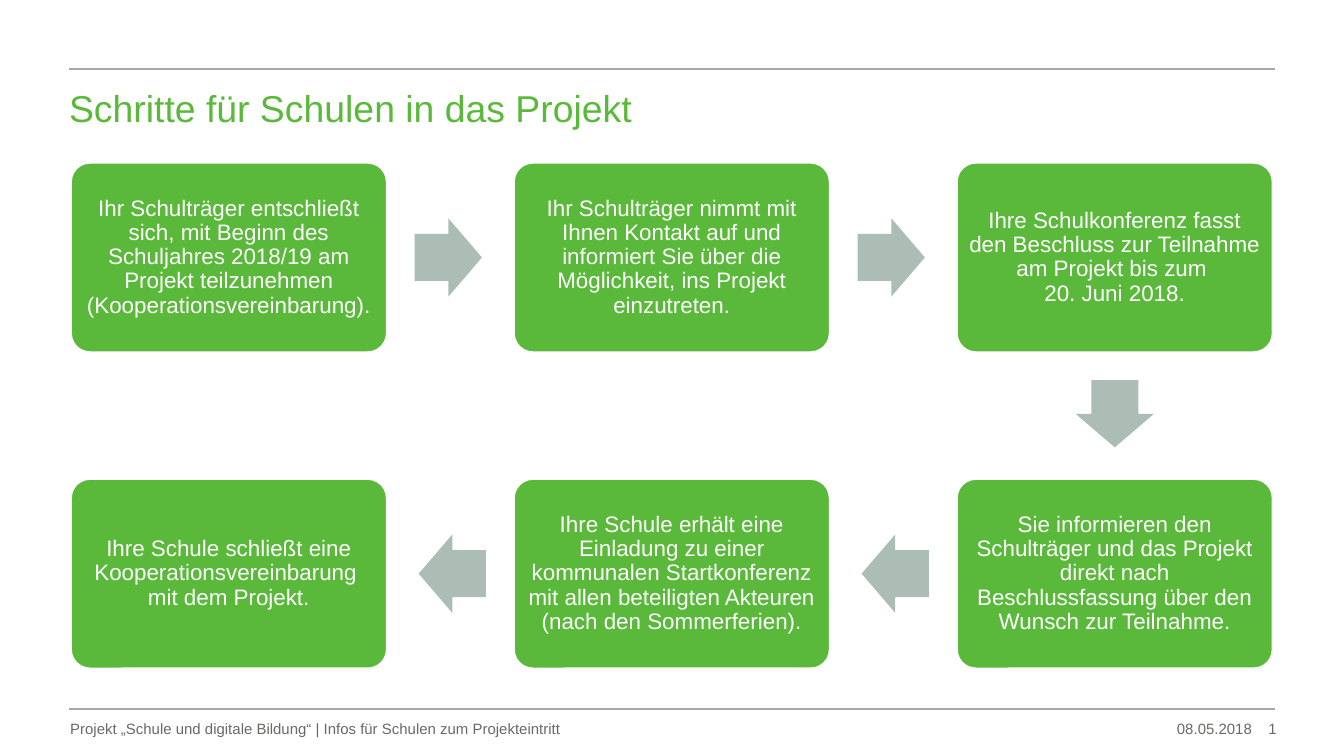
from pptx import Presentation
from pptx.dml.color import RGBColor
from pptx.enum.shapes import MSO_CONNECTOR, MSO_SHAPE
from pptx.enum.text import MSO_ANCHOR, PP_ALIGN
from pptx.oxml.ns import qn
from pptx.util import Pt
from lxml import etree

GREEN = RGBColor(0x5A, 0xB9, 0x3A)
SAGE = RGBColor(0xAB, 0xBD, 0xB4)
RULE_GRAY = RGBColor(0xA5, 0xA6, 0xA5)
TEXT_GRAY = RGBColor(0x67, 0x69, 0x65)
WHITE = RGBColor(0xFF, 0xFF, 0xFF)

FONT = "Arial"
COLUMNS = 3
STEP_WIDTH, STEP_HEIGHT = 169.2, 101.5
ARROW_LENGTH, ARROW_WIDTH, ARROW_GAP = 36, 42, 15

STEPS = [
    "Ihr Schulträger entschließt sich, mit Beginn des Schuljahres 2018/19 "
    "am Projekt teilzunehmen (Kooperationsvereinbarung).",
    "Ihr Schulträger nimmt mit Ihnen Kontakt auf und informiert Sie über "
    "die Möglichkeit, ins Projekt einzutreten.",
    "Ihre Schulkonferenz fasst den Beschluss zur Teilnahme am Projekt "
    "bis zum \n20. Juni 2018.",
    "Sie informieren den Schulträger und das Projekt direkt nach "
    "Beschlussfassung über den Wunsch zur Teilnahme.",
    "Ihre Schule erhält eine Einladung zu einer kommunalen Startkonferenz "
    "mit allen beteiligten Akteuren (nach den Sommerferien).",
    "Ihre Schule schließt eine Kooperationsvereinbarung \nmit dem Projekt.",
]


def write_text(box, text, size, color, align=PP_ALIGN.LEFT,
               anchor=MSO_ANCHOR.MIDDLE, insets=(7.2, 3.6)):
    frame = box.text_frame
    frame.word_wrap = True
    frame.vertical_anchor = anchor
    frame.margin_left = frame.margin_right = Pt(insets[0])
    frame.margin_top = frame.margin_bottom = Pt(insets[1])
    para = frame.paragraphs[0]
    para.alignment = align
    for number, line in enumerate(text.split("\n")):
        if number:
            para.add_line_break()
        span = para.add_run()
        span.text = line
        span.font.name = FONT
        span.font.size = Pt(size)
        span.font.color.rgb = color
    return para


def add_rule(page, left, top, width):
    rule = page.shapes.add_connector(
        MSO_CONNECTOR.STRAIGHT, Pt(left), Pt(top), Pt(left + width), Pt(top))
    rule.line.color.rgb = RULE_GRAY
    rule.line.width = Pt(1)
    etree.SubElement(rule._element.spPr, qn("a:effectLst"))


def add_header(page, left, top, width, height):
    add_rule(page, left, top, width)
    title = page.shapes.add_textbox(
        Pt(left), Pt(top + 8.7), Pt(width), Pt(height - 8.7))
    write_text(title, "Schritte für Schulen in das Projekt", 20, GREEN,
               anchor=MSO_ANCHOR.TOP, insets=(0, 0))


def add_step(page, left, top, text):
    step = page.shapes.add_shape(
        MSO_SHAPE.ROUNDED_RECTANGLE, Pt(left), Pt(top),
        Pt(STEP_WIDTH), Pt(STEP_HEIGHT))
    step.adjustments[0] = 0.1
    step.shadow.inherit = False
    step.fill.solid()
    step.fill.fore_color.rgb = GREEN
    step.line.color.rgb = WHITE
    step.line.width = Pt(1)
    para = write_text(step, text, 12, WHITE, PP_ALIGN.CENTER,
                      insets=(3.6, 3.6))
    para.line_spacing = 0.9


def add_arrow(page, center_x, center_y, rotation):
    arrow = page.shapes.add_shape(
        MSO_SHAPE.RIGHT_ARROW,
        Pt(center_x - ARROW_LENGTH / 2), Pt(center_y - ARROW_WIDTH / 2),
        Pt(ARROW_LENGTH), Pt(ARROW_WIDTH))
    arrow.adjustments[0] = 0.6
    arrow.adjustments[1] = 0.5
    arrow.rotation = rotation
    arrow.shadow.inherit = False
    arrow.fill.solid()
    arrow.fill.fore_color.rgb = SAGE
    arrow.line.fill.background()


def add_step_flow(page, left, top, width, height):
    """Steps run right along the first row, then back left along the second."""
    pitch_x = (width - STEP_WIDTH) / (COLUMNS - 1)
    pitch_y = height - STEP_HEIGHT
    reach = ARROW_GAP + ARROW_LENGTH / 2
    for number, text in enumerate(STEPS):
        row, column = divmod(number, COLUMNS)
        if row:
            column = COLUMNS - 1 - column
        step_left = left + column * pitch_x
        step_top = top + row * pitch_y
        add_step(page, step_left, step_top, text)

        # Arrow from this step to the next one
        if number == len(STEPS) - 1:
            continue
        center_x = step_left + STEP_WIDTH / 2
        center_y = step_top + STEP_HEIGHT / 2
        if number == COLUMNS - 1:
            add_arrow(page, center_x, center_y + STEP_HEIGHT / 2 + reach, 90)
        elif row:
            add_arrow(page, center_x - STEP_WIDTH / 2 - reach, center_y, 180)
        else:
            add_arrow(page, center_x + STEP_WIDTH / 2 + reach, center_y, 0)


def add_footer(page, left, top, width, height):
    add_rule(page, left, top, width)
    right = left + width
    fields = [
        (left - 6.5, 566,
         "Projekt „Schule und digitale Bildung“ | "
         "Infos für Schulen zum Projekteintritt", PP_ALIGN.LEFT),
        (right - 79.2, 74, "08.05.2018", PP_ALIGN.RIGHT),
        (right - 26, 34, "1", PP_ALIGN.RIGHT),
    ]
    for field_left, field_width, text, align in fields:
        field = page.shapes.add_textbox(
            Pt(field_left), Pt(top - 0.5), Pt(field_width), Pt(height))
        write_text(field, text, 8, TEXT_GRAY, align)


def main():
    deck = Presentation()
    deck.slide_width, deck.slide_height = Pt(720), Pt(405)
    page = deck.slides.add_slide(deck.slide_layouts[6])
    add_header(page, 37, 36.9, 646, 59.6)
    add_step_flow(page, 38, 87.2, 643.8, 270.9)
    add_footer(page, 37, 380, 646, 21.6)
    deck.save("out.pptx")


if __name__ == "__main__":
    main()
